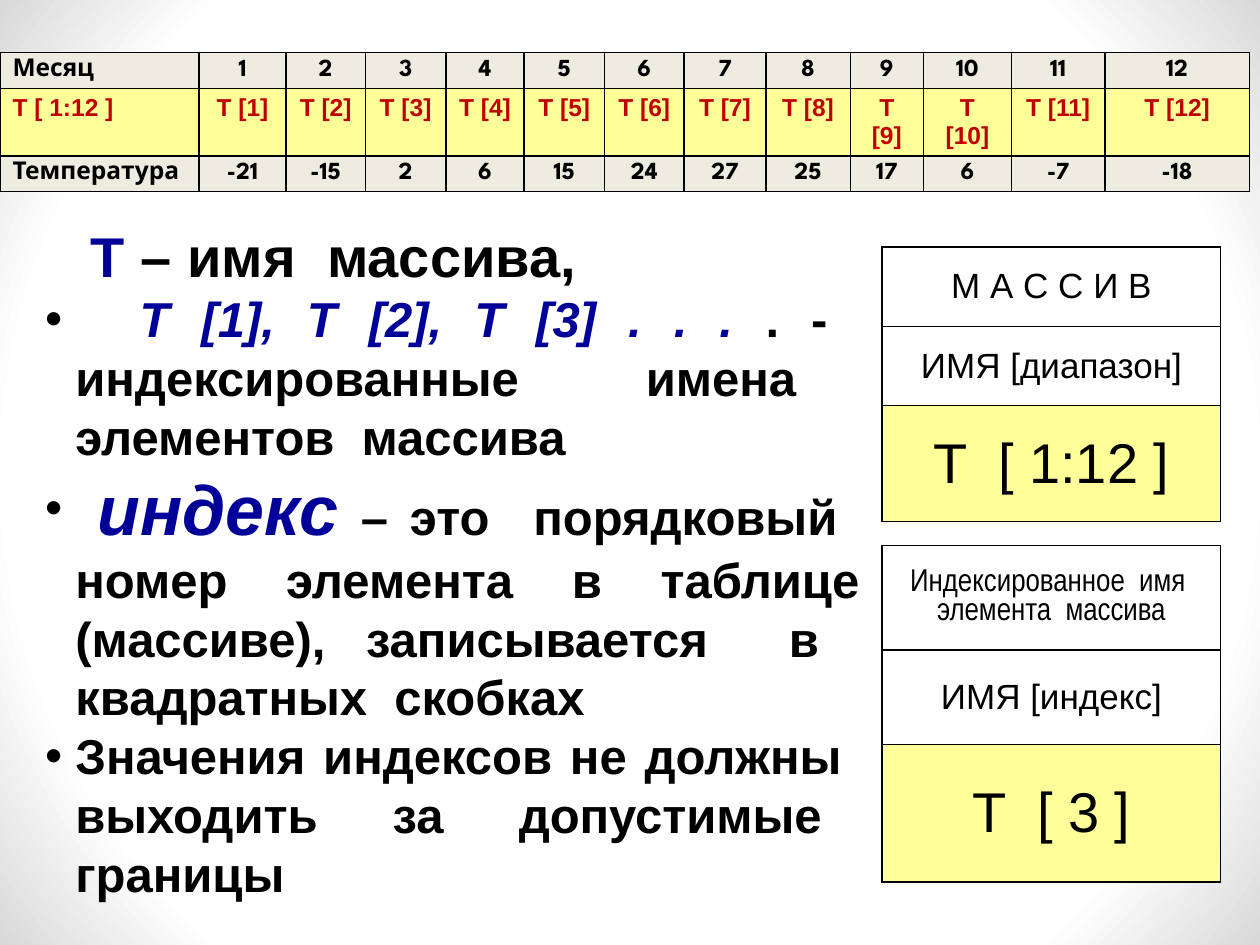
from lxml import etree
from pptx import Presentation, oxml
from pptx import util as u
from pptx.dml.color import RGBColor
from pptx.enum import shapes, text
from pptx.oxml import ns

BLACK = RGBColor(0x00, 0x00, 0x00)
NAVY = RGBColor(0x00, 0x00, 0x99)
RED = RGBColor(0xC0, 0x00, 0x00)
YELLOW = RGBColor(0xFF, 0xFF, 0x99)
BEIGE = RGBColor(0xEE, 0xEC, 0xE1)
WHITE = RGBColor(0xFF, 0xFF, 0xFF)
GREY = RGBColor(0xD9, 0xD9, 0xD9)


def add_span(para, words, color, formats):
    span = para.add_run()
    span.text = words
    for name, value in formats.items():
        setattr(span.font, name, value)
    span.font.color.rgb = color


def add_grid(page, left, top, widths, heights, outer, inner):
    frame = page.shapes.add_table(
        len(heights), len(widths), u.Inches(left), u.Inches(top),
        u.Inches(sum(widths)), u.Inches(sum(heights)))
    table = frame.table
    table.first_row = table.horz_banding = False
    for column, width in zip(table.columns, widths):
        column.width = u.Inches(width)
    for row, height in zip(table.rows, heights):
        row.height = u.Inches(height)
    for i in range(len(heights)):
        for j in range(len(widths)):
            edges = {"L": j == 0, "R": j == len(widths) - 1,
                     "T": i == 0, "B": i == len(heights) - 1}
            properties = table.cell(i, j)._tc.get_or_add_tcPr()
            for side, outside in edges.items():
                line = etree.SubElement(properties, ns.qn(f"a:ln{side}"),
                                        w=str(u.Pt(outer if outside else inner)))
                fill = etree.SubElement(line, ns.qn("a:solidFill"))
                etree.SubElement(fill, ns.qn("a:srgbClr"), val=str(BLACK))
    return table


deck = Presentation()
deck.slide_width = u.Inches(10)
deck.slide_height = u.Inches(7.5)
page = deck.slides.add_slide(deck.slide_layouts[6])

backdrop = page.shapes.add_shape(
    shapes.MSO_SHAPE.RECTANGLE, u.Inches(0), u.Inches(0), deck.slide_width, deck.slide_height)
backdrop.shadow.inherit = False
backdrop.line.fill.background()
backdrop.fill.solid()
plain = backdrop.element.spPr.find(ns.qn("a:solidFill"))
plain.getparent().replace(plain, oxml.parse_xml(
    f'<a:gradFill {ns.nsdecls("a")} rotWithShape="1"><a:gsLst>'
    f'<a:gs pos="79000"><a:srgbClr val="{WHITE}"/></a:gs>'
    f'<a:gs pos="100000"><a:srgbClr val="{GREY}"/></a:gs></a:gsLst>'
    '<a:path path="circle"><a:fillToRect l="50000" t="50000" r="50000" b="50000"/>'
    '</a:path></a:gradFill>'))

months = range(1, 13)
temperatures = [-21, -15, 2, 6, 15, 24, 27, 25, 17, 6, -7, -18]
month_rows = [
    (["Месяц", *months], "League Spartan", BLACK, BEIGE),
    (["T [ 1:12 ]", *[f"T [{month}]" for month in months]], "Arial", RED, YELLOW),
    (["Температура", *temperatures], "League Spartan", BLACK, BEIGE),
]
month_widths = [1.58, 0.69, 0.63, 0.64, 0.62, 0.64, 0.63, 0.65, 0.67, 0.58, 0.7, 0.74, 1.15]
month_table = add_grid(page, 0, 0.42, month_widths, [0.28, 0.53, 0.28], 0.75, 1)
for i, (values, font, color, shade) in enumerate(month_rows):
    for j, value in enumerate(values):
        cell = month_table.cell(i, j)
        cell.fill.solid()
        cell.fill.fore_color.rgb = shade
        para = cell.text_frame.paragraphs[0]
        para.alignment = text.PP_ALIGN.CENTER if j else text.PP_ALIGN.LEFT
        add_span(para, str(value), color, {"name": font, "size": u.Pt(14), "bold": True})

definitions = [
    (0.5, 0, False, [(" Т ", 32, NAVY, False), ("– имя  массива,", 32, BLACK, False)]),
    (0.5, -0.24, True, [
        ("  ", 28, BLACK, False),
        ("Т [1], Т [2], Т [3] . . . ", 28, NAVY, True),
        (". -  индексированные  имена  элементов  массива", 28, BLACK, False)]),
    (0.5, -0.24, True, [
        (" ", 28, BLACK, False),
        ("индекс", 40, NAVY, True),
        (" – это  порядковый  номер  элемента  в  таблице (массиве), "
         "записывается  в  квадратных  скобках", 28, BLACK, False)]),
    (0.5, -0.24, True, [
        ("Значения индексов не должны  выходить  за  допустимые  границы", 28, BLACK, False)]),
]
box = page.shapes.add_textbox(u.Inches(0), u.Inches(1.71), u.Inches(6.92), u.Inches(5.56))
box.text_frame.word_wrap = True
for i, (margin, indent, bulleted, spans) in enumerate(definitions):
    para = box.text_frame.add_paragraph() if i else box.text_frame.paragraphs[0]
    para.alignment = text.PP_ALIGN.JUSTIFY
    properties = para._p.get_or_add_pPr()
    properties.set("marL", str(u.Inches(margin)))
    properties.set("indent", str(u.Inches(indent)))
    if bulleted:
        etree.SubElement(properties, ns.qn("a:buFont"), typeface="Arial")
        etree.SubElement(properties, ns.qn("a:buChar"), char="•")
    for words, size, color, italic in spans:
        add_span(para, words, color,
                 {"name": "Arial", "size": u.Pt(size), "bold": True, "italic": italic})

summaries = [
    (1.96, [0.63, 0.63, 0.92], [("М А С С И В", 20, "Arial"),
                                ("ИМЯ [диапазон]", 20, "Arial"),
                                ("Т  [ 1:12 ]", 32, "Arial")]),
    (4.33, [0.83, 0.75, 1.09], [("Индексированное  имя  элемента  массива", 18, "Arial Narrow"),
                                ("ИМЯ [индекс]", 20, "Arial"),
                                ("Т  [ 3 ]", 32, "Arial")]),
]
for top, heights, lines in summaries:
    summary = add_grid(page, 7, top, [2.69], heights, 0.75, 1)
    for i, (words, size, font) in enumerate(lines):
        cell = summary.cell(i, 0)
        cell.vertical_anchor = text.MSO_ANCHOR.MIDDLE
        if i == 2:
            cell.fill.solid()
            cell.fill.fore_color.rgb = YELLOW
        else:
            cell.fill.background()
        para = cell.text_frame.paragraphs[0]
        para.alignment = text.PP_ALIGN.CENTER
        add_span(para, words, BLACK, {"name": font, "size": u.Pt(size), "bold": False})

deck.save("out.pptx")
